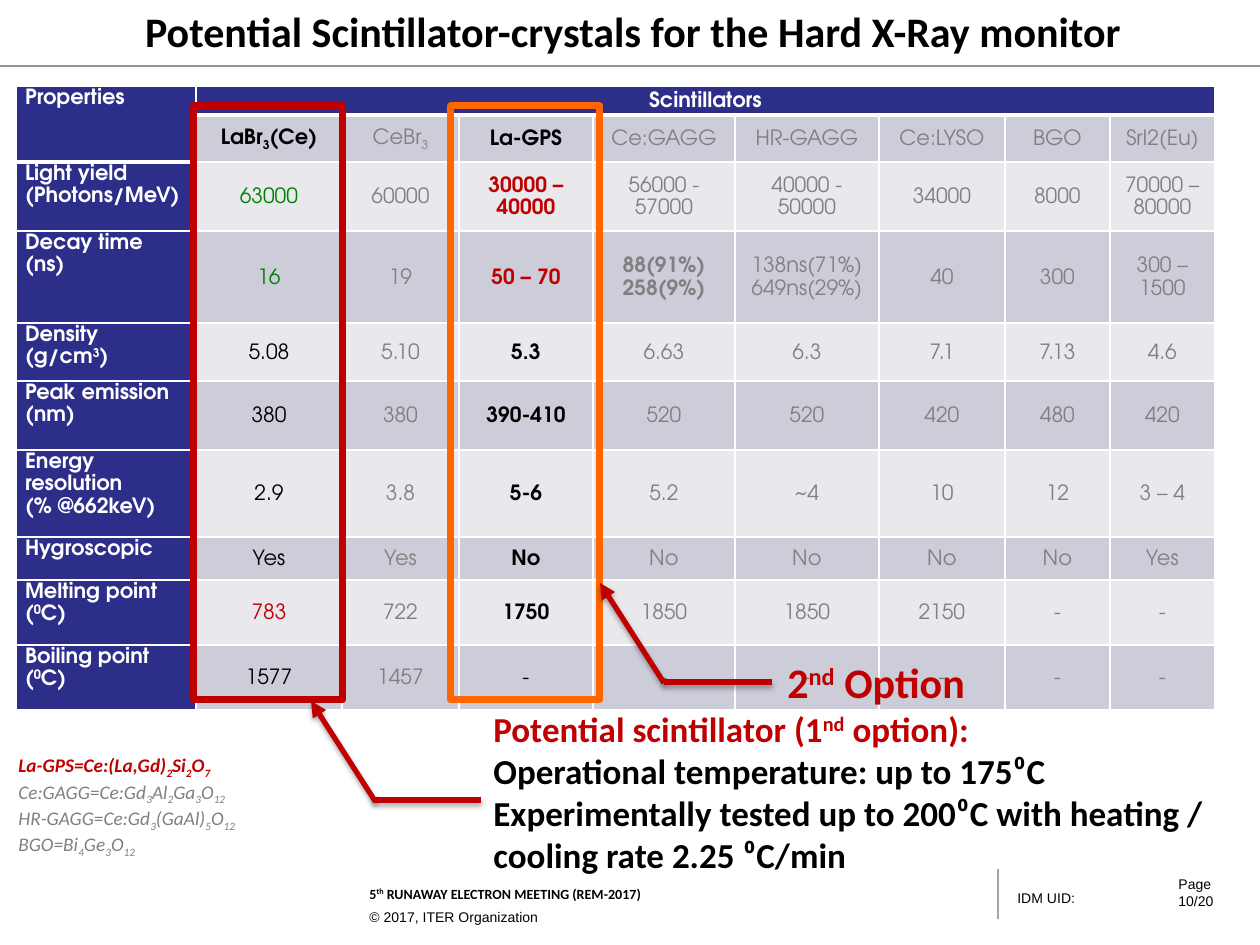
from dataclasses import dataclass

from lxml.etree import SubElement
from pptx import Presentation
from pptx.dml.color import RGBColor
from pptx.enum.shapes import MSO_CONNECTOR, MSO_SHAPE
from pptx.enum.text import MSO_ANCHOR as Anchor, PP_ALIGN as Align
from pptx.oxml.ns import qn
from pptx.util import Emu, Pt

SCALE = 914400 / 126  # EMU per px
COLOURS = {
    "black": "000000", "white": "FFFFFF", "navy": "2D2D8A", "grey": "808080",
    "red": "C00000", "green": "008000", "orange": "FF6600", "rule": "969696",
    "divider": "A6A6A6", "dark band": "CDCDDA", "light band": "E8E8ED",
}
SCRIPT_BASELINES = {"_": "-25000", "^": "30000"}
TABLE_FONT = "TeX Gyre Adventor"


@dataclass
class Line:
    """One paragraph; {_x} is a subscript and {^x} a superscript."""
    text: str
    size: int
    colour: str = "black"
    bold: bool = False
    italic: bool = False
    font: str = "Calibri"
    space_before: int = 0


@dataclass
class TextBox:
    left: int
    top: int
    width: int
    height: int
    lines: list[Line]
    anchor: Anchor = Anchor.TOP
    wrap: bool = True


@dataclass
class Row:
    """One table row; * marks a bold cell, the rest is grey."""
    height: int
    cells: list[str]
    first_colour: str = "black"
    second_colour: str = "black"


@dataclass
class Stroke:
    start: tuple[int, int]
    end: tuple[int, int]
    colour: str = "red"
    width: float = 3
    arrow: bool = False
    shadow: bool = True


def px(length: int) -> Emu:
    return Emu(round(length * SCALE))


def rgb(name: str) -> RGBColor:
    return RGBColor.from_string(COLOURS[name])


def write_lines(text_frame, lines: list[Line], align=Align.LEFT, spacing=None) -> None:
    for index, line in enumerate(lines):
        paragraph = text_frame.add_paragraph() if index else text_frame.paragraphs[0]
        paragraph.alignment = align
        paragraph.line_spacing = spacing
        if line.space_before:
            paragraph.space_before = Pt(line.space_before)
        for part, chunk in enumerate(line.text.replace("}", "{").split("{")):
            if not chunk:
                continue
            is_script = part % 2 == 1
            run = paragraph.add_run()
            run.text = chunk[1:] if is_script else chunk
            font = run.font
            font.name, font.size = line.font, Pt(line.size)
            font.bold, font.italic = line.bold, line.italic
            font.color.rgb = rgb(line.colour)
            if is_script:
                run._r.get_or_add_rPr().set("baseline", SCRIPT_BASELINES[chunk[0]])


def draw_text(slide, box: TextBox) -> None:
    shape = slide.shapes.add_textbox(*map(px, (box.left, box.top, box.width, box.height)))
    shape.text_frame.word_wrap = box.wrap
    shape.text_frame.vertical_anchor = box.anchor
    write_lines(shape.text_frame, box.lines)


def draw_stroke(slide, stroke: Stroke) -> None:
    connector = slide.shapes.add_connector(
        MSO_CONNECTOR.STRAIGHT, *map(px, stroke.start + stroke.end))
    connector.line.color.rgb = rgb(stroke.colour)
    connector.line.width = Pt(stroke.width)
    if stroke.arrow:
        SubElement(connector.line._get_or_add_ln(), qn("a:tailEnd"), type="triangle")
    effects = SubElement(connector._element.spPr, qn("a:effectLst"))
    if stroke.shadow:
        shadow = SubElement(effects, qn("a:outerShdw"), blurRad="39370", dist="22860",
                            dir="5400000", rotWithShape="0")
        colour = SubElement(shadow, qn("a:srgbClr"), val=COLOURS["black"])
        SubElement(colour, qn("a:alpha"), val="35000")


def draw_frame(slide, left: int, colour: str) -> None:
    frame = slide.shapes.add_shape(MSO_SHAPE.RECTANGLE, *map(px, (left, 106, 149, 594)))
    frame.shadow.inherit = False
    frame.fill.background()
    frame.line.color.rgb = rgb(colour)
    frame.line.width = Pt(4)


def format_cell(cell, fill: str, thick_bottom: bool) -> None:
    properties = cell._tc.get_or_add_tcPr()
    for side in ("lnL", "lnR", "lnT", "lnB"):
        width = Pt(3 if thick_bottom and side == "lnB" else 1)
        border = SubElement(properties, qn(f"a:{side}"), w=str(width))
        solid = SubElement(border, qn("a:solidFill"))
        SubElement(solid, qn("a:srgbClr"), val=COLOURS["white"])
    cell.fill.solid()
    cell.fill.fore_color.rgb = rgb(fill)
    cell.margin_left = cell.margin_right = px(9)
    cell.margin_top = cell.margin_bottom = 0


def draw_table(slide, left: int, top: int, widths: list[int], rows: list[Row]) -> None:
    height = sum(row.height for row in rows)
    table = slide.shapes.add_table(
        len(rows), len(widths), *map(px, (left, top, sum(widths), height))).table
    for column, width in zip(table.columns, widths):
        column.width = px(width)
    for r, row in enumerate(rows):
        table.rows[r].height = px(row.height)
        for c in range(len(widths)):
            cell = table.cell(r, c)
            is_header = r == 0 or c == 0
            band = "dark band" if r % 2 else "light band"
            format_cell(cell, "navy" if is_header else band, r == 0 or (r, c) == (1, 0))
            text = row.cells[c] if c < len(row.cells) else ""
            colour = "white" if is_header else {
                1: row.first_colour, 3: row.second_colour}.get(c, "grey")
            bold = is_header or text.startswith("*")
            cell.vertical_anchor = Anchor.MIDDLE if c else Anchor.TOP
            lines = [Line(part, 12, colour, bold, font=TABLE_FONT)
                     for part in text.lstrip("*").split("\n")]
            write_lines(cell.text_frame, lines, Align.CENTER if c else Align.LEFT, 1.15)
    table.cell(0, 0).merge(table.cell(1, 0))
    table.cell(0, 1).merge(table.cell(0, len(widths) - 1))


COLUMN_WIDTHS = [180, 146, 117, 134, 142, 144, 126, 105, 105]
ROWS = [
    Row(27, ["Properties", "Scintillators"]),
    Row(47, ["", "*LaBr{_3}(Ce)", "CeBr{_3}", "*La-GPS", "Ce:GAGG", "HR-GAGG", "Ce:LYSO",
             "BGO", "SrI2(Eu)"]),
    Row(69, ["Light yield\n(Photons/MeV)", "63000", "60000", "*30000 –\n40000",
             "56000 -\n57000", "40000 -\n50000", "34000", "8000", "70000 – 80000"],
        "green", "red"),
    Row(92, ["Decay time\n(ns)", "16", "19", "*50 – 70", "*88(91%)\n258(9%)",
             "138ns(71%)\n649ns(29%)", "40", "300", "300 –\n1500"], "green", "red"),
    Row(58, ["Density\n(g/cm{^3})", "5.08", "5.10", "*5.3", "6.63", "6.3", "7.1", "7.13", "4.6"]),
    Row(69, ["Peak emission\n(nm)", "380", "380", "*390-410", "520", "520", "420", "480", "420"]),
    Row(87, ["Energy resolution\n(% @662keV)", "2.9", "3.8", "*5-6", "5.2", "~4", "10", "12",
             "3 – 4"]),
    Row(43, ["Hygroscopic", "Yes", "Yes", "*No", "No", "No", "No", "No", "Yes"]),
    Row(65, ["Melting point\n(⁰C)", "783", "722", "*1750", "1850", "1850", "2150", "-", "-"],
        "red"),
    Row(65, ["Boiling point\n(⁰C)", "1577", "1457"] + ["-"] * 6),
]
FOOTER = [
    TextBox(357, 878, 630, 55, [
        Line("5{^th} RUNAWAY ELECTRON MEETING (REM-2017)", 8, bold=True),
        Line("© 2017, ITER Organization", 8, font="Arial", space_before=4)], Anchor.MIDDLE),
    TextBox(1166, 869, 81, 47, [Line("Page 10/20", 8, font="Arial")], Anchor.MIDDLE),
    TextBox(1005, 883, 154, 30, [Line("IDM UID:", 8, font="Arial")], Anchor.MIDDLE),
]
FORMULAS = TextBox(6, 753, 252, 106, [
    Line("La-GPS=Ce:(La,Gd){_2}Si{_2}O{_7}", 11, "red", True, True),
    Line("Ce:GAGG=Ce:Gd{_3}Al{_2}Ga{_3}O{_12}", 11, "grey", italic=True),
    Line("HR-GAGG=Ce:Gd{_3}(GaAl){_5}O{_12}", 11, "grey", italic=True),
    Line("BGO=Bi{_4}Ge{_3}O{_12}", 11, "grey", italic=True)], Anchor.MIDDLE, wrap=False)
FIRST_OPTION = TextBox(481, 701, 779, 183, [
    Line("Potential scintillator (1{^nd} option):", 20, "red", True),
    Line("Operational temperature: up to 175⁰C", 20, bold=True),
    Line("Experimentally tested up to 200⁰C with heating / cooling rate 2.25 ⁰C/min", 20,
         bold=True)])
SECOND_OPTION = TextBox(775, 650, 209, 63, [Line("2{^nd} Option", 24, "red", True)], wrap=False)
RULES = [
    Stroke((0, 66), (1260, 66), "rule", 1.25, shadow=False),
    Stroke((998, 869), (998, 919), "divider", 0.75, shadow=False),
]
POINTERS = [
    Stroke((375, 801), (311, 701), arrow=True),
    Stroke((481, 800), (373, 800)),
    Stroke((664, 683), (600, 583), arrow=True),
    Stroke((772, 682), (664, 682)),
]


def main() -> None:
    presentation = Presentation()
    presentation.slide_width, presentation.slide_height = px(1260), px(945)
    slide = presentation.slides.add_slide(presentation.slide_layouts[5])

    # Title
    title = slide.shapes.title
    title.left, title.top, title.width, title.height = map(px, (6, -1, 1254, 63))
    title.text_frame.vertical_anchor = Anchor.TOP
    write_lines(title.text_frame, [Line(
        "Potential Scintillator-crystals for the Hard X-Ray monitor", 24, bold=True)],
        Align.CENTER)

    # Footer and rules
    for rule in RULES:
        draw_stroke(slide, rule)
    for box in FOOTER:
        draw_text(slide, box)

    # Properties table and formulas
    draw_table(slide, 16, 86, COLUMN_WIDTHS, ROWS)
    draw_text(slide, FORMULAS)

    # Highlighted columns and their callouts
    draw_frame(slide, 194, "red")
    draw_frame(slide, 451, "orange")
    for pointer in POINTERS:
        draw_stroke(slide, pointer)
    draw_text(slide, FIRST_OPTION)
    draw_text(slide, SECOND_OPTION)

    presentation.save("out.pptx")


if __name__ == "__main__":
    main()
